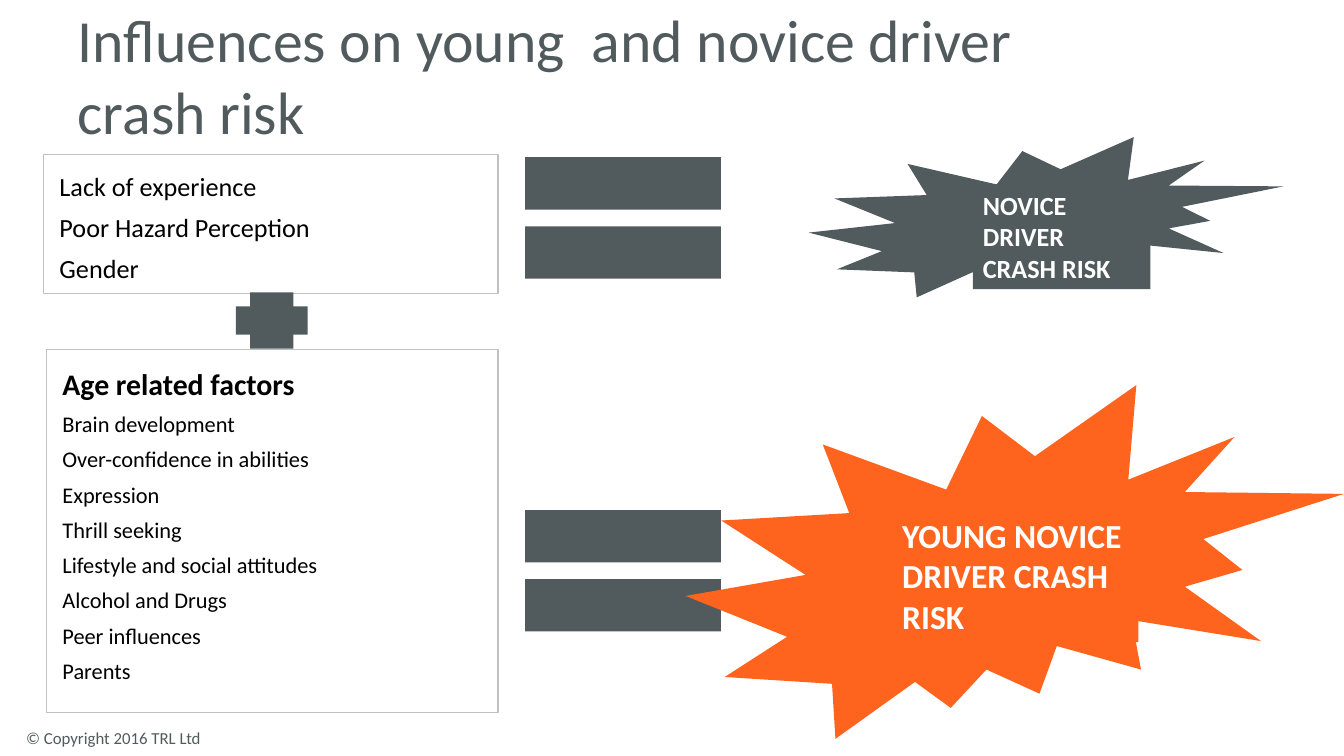
from pptx import Presentation
from pptx.dml.color import RGBColor
from pptx.enum.shapes import MSO_SHAPE as Preset
from pptx.enum.text import MSO_ANCHOR as Anchor, MSO_AUTO_SIZE as AutoSize, PP_ALIGN as Align
from pptx.oxml.ns import qn
from pptx.util import Inches, Pt

# Content
TITLE = "Influences on young  and novice driver crash risk"
COPYRIGHT = "© Copyright 2016 TRL Ltd"
EXPERIENCE = [(line, 18.7, False) for line in
              ("Lack of experience", "Poor Hazard Perception", "Gender")]
AGE_RELATED = [("Age related factors", 21.3, True)] + [
    (line, 16, False) for line in
    ("Brain development", "Over-confidence in abilities", "Expression",
     "Thrill seeking", "Lifestyle and social attitudes", "Alcohol and Drugs",
     "Peer influences", "Parents")]

COLORS = {"slate": "515B5E", "orange": "FF641E", "outline": "C0C0C0",
          "black": "000000", "white": "FFFFFF"}
FONT = "Calibri"

# Places in inches: left, top, width, height
SLIDE_W, SLIDE_H = 13.33, 7.5
TITLE_BOX = (0.67, 0.29, 10.27, 0.9)
COPYRIGHT_BOX = (0.16, 7.17, 2.18, 0.3)
FACTORS = [((0.43, 1.53, 4.51, 1.38), EXPERIENCE),
           ((0.46, 3.47, 4.48, 3.6), AGE_RELATED)]
PLUS_BOX = (2.34, 2.9, 0.71, 0.56)
EQUALS_LEFT, EQUALS_TOPS = 5.21, (1.56, 5.06)
BAR_W, BAR_H, BAR_STEP = 1.94, 0.52, 0.685
OUTCOMES = [
    ("NOVICE DRIVER CRASH RISK", 18.7, "slate",
     (8.02, 1.36, 4.71, 1.59), (9.65, 1.83, 1.76, 1.04)),
    ("YOUNG NOVICE DRIVER CRASH RISK", 24, "orange",
     (6.8, 3.82, 6.53, 3.51), (8.85, 5.06, 2.44, 1.31))]


def color(name):
    return RGBColor.from_string(COLORS[name])


def inches(box):
    return [Inches(length) for length in box]


def place(part, box):
    part.left, part.top, part.width, part.height = inches(box)


def write(part, lines, ink="black", anchor=Anchor.TOP, hanging=0):
    """Fill a part with (text, size, bold) lines."""
    frame = part.text_frame
    frame.word_wrap, frame.auto_size = True, AutoSize.NONE
    frame.vertical_anchor = anchor
    for number, (text, size, bold) in enumerate(lines):
        paragraph = frame.add_paragraph() if number else frame.paragraphs[0]
        paragraph.alignment = Align.LEFT
        paragraph.space_before = Pt(round(0.38 * size) if number else 0)
        if hanging:
            properties = paragraph._p.get_or_add_pPr()
            properties.set("marL", str(Inches(hanging)))
            properties.set("indent", str(-Inches(hanging)))
            properties.append(properties.makeelement(qn("a:buNone"), {}))
        run = paragraph.add_run()
        run.text = text
        run.font.name, run.font.size, run.font.bold = FONT, Pt(size), bold
        run.font.color.rgb = color(ink)


def add_solid(shapes, preset, box, fill):
    solid = shapes.add_shape(preset, *inches(box))
    solid.shadow.inherit = False
    solid.fill.solid()
    solid.fill.fore_color.rgb = color(fill)
    solid.line.fill.background()
    return solid


deck = Presentation()
deck.slide_width, deck.slide_height = Inches(SLIDE_W), Inches(SLIDE_H)
slide = deck.slides.add_slide(deck.slide_layouts.get_by_name("Two Content"))
shapes = slide.shapes

# Title and copyright line
title, *factor_lists = slide.placeholders
place(title, TITLE_BOX)
write(title, [(TITLE, 42.7, False)], ink="slate", anchor=Anchor.MIDDLE)
copyright_line = shapes.add_textbox(*inches(COPYRIGHT_BOX))
write(copyright_line, [(COPYRIGHT, 12, False)], ink="slate")

# Factor lists
for factor_list, (box, lines) in zip(factor_lists, FACTORS):
    place(factor_list, box)
    factor_list.line.color.rgb = color("outline")
    factor_list.line.width = Pt(1)
    write(factor_list, lines, hanging=0.28)
    frame = factor_list.text_frame
    frame.margin_left = frame.margin_top = Inches(0.16)
    frame.margin_right = frame.margin_bottom = Inches(0.1)

# Plus and equals signs
add_solid(shapes, Preset.CROSS, PLUS_BOX, "slate")
for top in EQUALS_TOPS:
    for bar in range(2):
        add_solid(shapes, Preset.RECTANGLE,
                  (EQUALS_LEFT, top + bar * BAR_STEP, BAR_W, BAR_H), "slate")

# Outcome bursts
for text, size, fill, burst_box, label_box in OUTCOMES:
    outcome = shapes.add_group_shape().shapes
    add_solid(outcome, Preset.EXPLOSION2, burst_box, fill)
    label = add_solid(outcome, Preset.RECTANGLE, label_box, fill)
    write(label, [(text, size, True)], ink="white")

deck.save("out.pptx")
